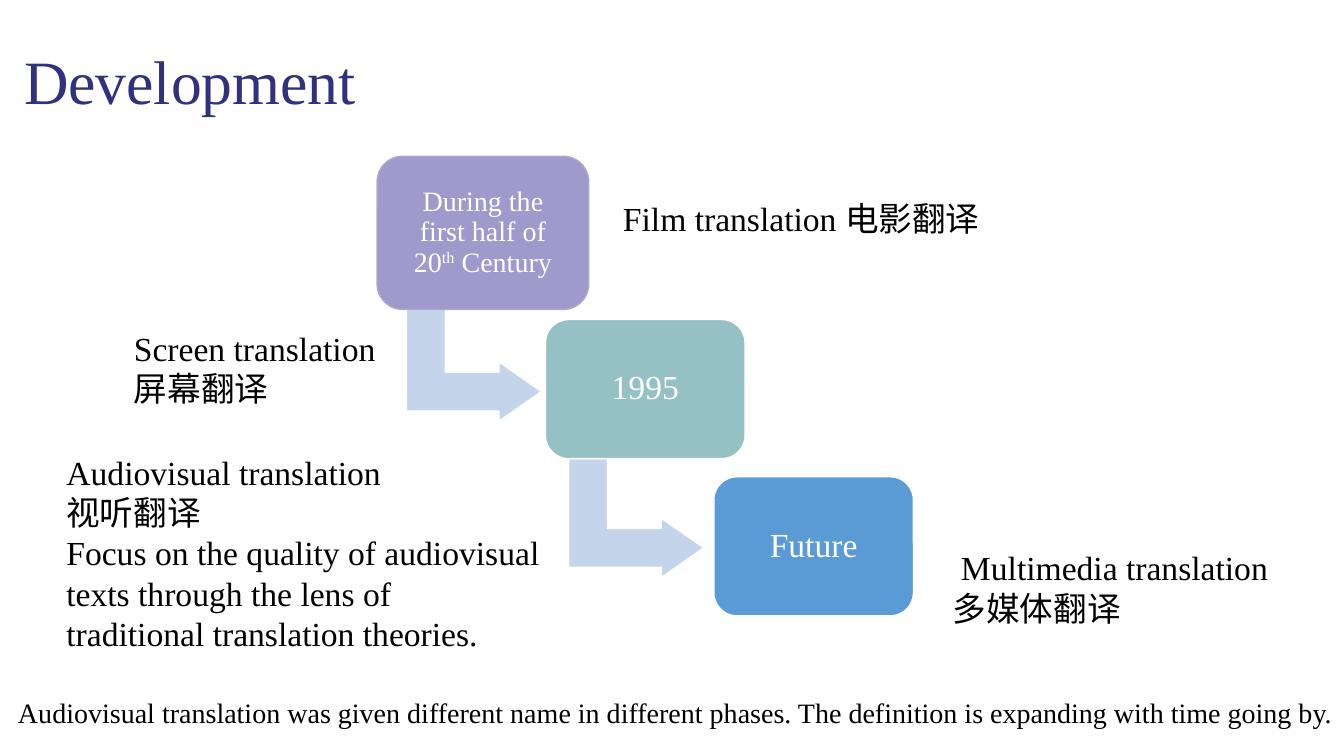
from pptx import Presentation
from pptx.dml.color import RGBColor
from pptx.enum.shapes import MSO_SHAPE
from pptx.enum.text import MSO_ANCHOR, PP_ALIGN
from pptx.util import Inches, Pt

FONT = "Times New Roman"
COLORS = {
    "title": "31327F", "text": "000000", "white": "FFFFFF", "arrow": "C4D5EB",
    "purple": "A099CB", "purple_line": "AFA8D3", "teal": "95C1C4", "blue": "5B9BD5",
}

# Steps: box, fill, line, text size, inset, runs as (text, superscript)
STEPS = [
    ((3.74, 1.55, 2.1, 1.52), "purple", "purple_line", 20, 0.15,
     [("During the first half of 20", False), ("th", True), (" Century", False)]),
    ((5.41, 3.17, 1.98, 1.38), "teal", "white", 24, 0.17, [("1995", False)]),
    ((7.08, 4.73, 1.98, 1.38), "blue", "white", 24, 0.17, [("Future", False)]),
]

# Arrows before rotation: box of each
ARROWS = [(4.11, 2.92, 1.18, 1.34), (5.72, 4.47, 1.18, 1.34)]
ARROW_ADJUSTMENTS = (0.328, 0.25, 0.358)

# Texts: box, size, colour, anchor, lines
TEXTS = [
    ((0.14, 0.07, 11.5, 1.45), 44, "title", MSO_ANCHOR.MIDDLE, ["Development"]),
    ((6.08, 1.91, 6.22, 0.5), 24, "text", MSO_ANCHOR.TOP,
     ["Film translation 电影翻译"]),
    ((9.35, 5.38, 3.9, 0.91), 24, "text", MSO_ANCHOR.TOP,
     [" Multimedia translation", "多媒体翻译"]),
    ((1.23, 3.2, 2.7, 0.91), 24, "text", MSO_ANCHOR.TOP,
     ["Screen translation", "屏幕翻译"]),
    ((0.56, 4.43, 4.95, 2.12), 24, "text", MSO_ANCHOR.TOP,
     ["Audiovisual translation", "视听翻译",
      "Focus on the quality of audiovisual", "texts through the lens of",
      "traditional translation theories."]),
    ((0.08, 6.85, 13.25, 0.44), 20, "text", MSO_ANCHOR.TOP,
     ["Audiovisual translation was given different name in different phases. "
      "The definition is expanding with time going by."]),
]


def rgb(name):
    return RGBColor.from_string(COLORS[name])


def format_run(r, size, color):
    r.font.name = FONT
    r.font.size = Pt(size)
    r.font.color.rgb = rgb(color)


def add_block(slide, kind, box, fill, line):
    sp = slide.shapes.add_shape(kind, *map(Inches, box))
    sp.shadow.inherit = False
    sp.fill.solid()
    sp.fill.fore_color.rgb = rgb(fill)
    sp.line.color.rgb = rgb(line)
    sp.line.width = Pt(1)
    return sp


def add_step(slide, box, fill, line, size, inset, runs):
    sp = add_block(slide, MSO_SHAPE.ROUNDED_RECTANGLE, box, fill, line)
    sp.adjustments[0] = 0.167
    tf = sp.text_frame
    tf.word_wrap = True
    tf.vertical_anchor = MSO_ANCHOR.MIDDLE
    tf.margin_left = tf.margin_right = Inches(inset)
    tf.margin_top = tf.margin_bottom = Inches(inset)
    p = tf.paragraphs[0]
    p.alignment = PP_ALIGN.CENTER
    p.line_spacing = 0.9
    for text, superscript in runs:
        r = p.add_run()
        r.text = text
        format_run(r, size, "white")
        if superscript:
            r.font._element.set("baseline", "30000")


def add_arrow(slide, box):
    sp = add_block(slide, MSO_SHAPE.BENT_UP_ARROW, box, "arrow", "white")
    sp.rotation = 90
    for i, value in enumerate(ARROW_ADJUSTMENTS):
        sp.adjustments[i] = value


def add_text(slide, box, size, color, anchor, lines):
    tf = slide.shapes.add_textbox(*map(Inches, box)).text_frame
    tf.word_wrap = True
    tf.vertical_anchor = anchor
    tf.text = "\n".join(lines)
    for p in tf.paragraphs:
        for r in p.runs:
            format_run(r, size, color)


def main():
    prs = Presentation()
    prs.slide_width, prs.slide_height = Inches(13.33), Inches(7.5)
    slide = prs.slides.add_slide(prs.slide_layouts[6])

    # Staircase of steps joined by arrows
    for box in ARROWS:
        add_arrow(slide, box)
    for step in STEPS:
        add_step(slide, *step)

    # Title, labels and closing line
    for text in TEXTS:
        add_text(slide, *text)

    prs.save("out.pptx")


if __name__ == "__main__":
    main()
